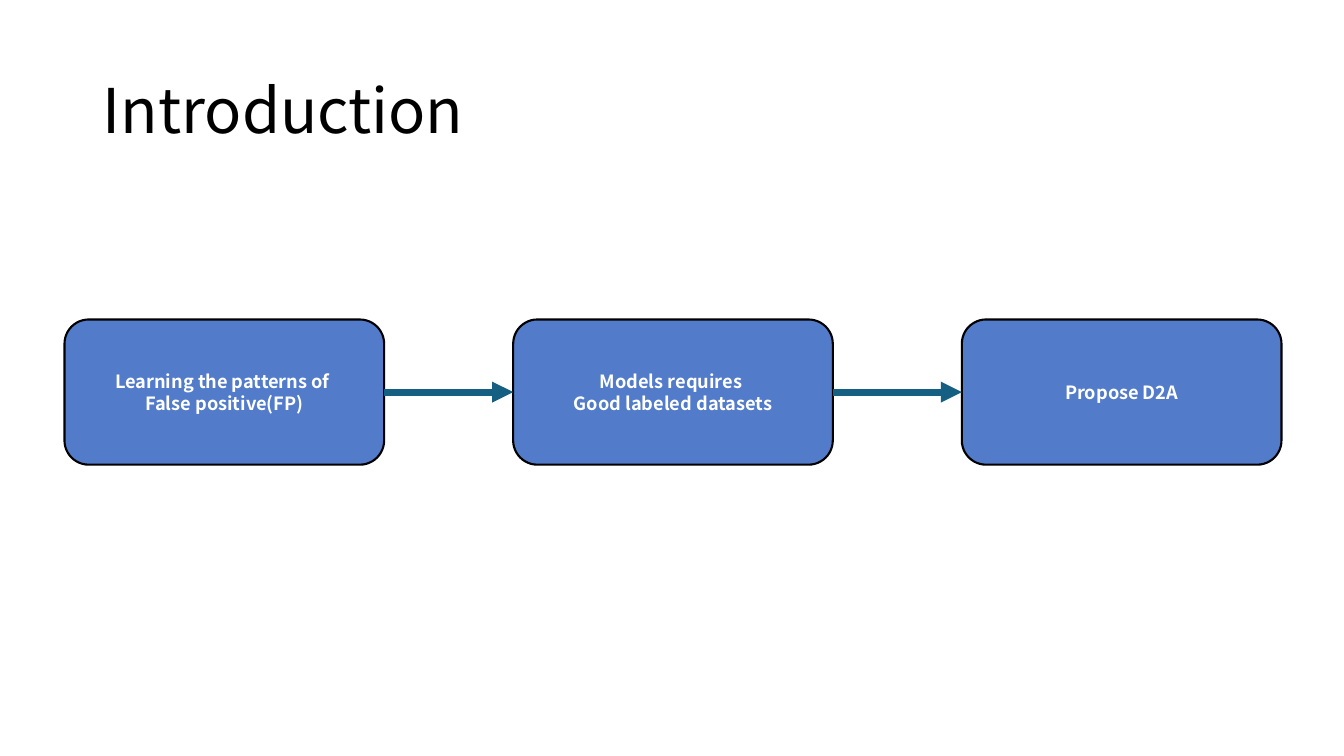
"""Build the Introduction slide: a title above a chain of three linked steps."""
from dataclasses import dataclass
from itertools import pairwise

from lxml.etree import SubElement
from pptx import Presentation
from pptx.dml.color import RGBColor
from pptx.enum.shapes import MSO_CONNECTOR as Connector, MSO_SHAPE as Shape
from pptx.enum.text import MSO_ANCHOR as Anchor, PP_ALIGN as Align
from pptx.oxml.ns import qn
from pptx.shapes.autoshape import Shape as Box
from pptx.slide import Slide
from pptx.text.text import TextFrame
from pptx.util import Inches, Pt

COLOURS = {"ink": "000000", "step": "527BCA", "label": "FFFFFF", "arrow": "156082"}
FONT = "Noto Sans CJK KR"
PAGE_WIDTH, PAGE_HEIGHT = 13.33, 7.5
FIRST_LEFT, COLUMN_PITCH = 0.64, 4.45
STEP_TOP, STEP_WIDTH, STEP_HEIGHT = 3.17, 3.17, 1.44
RIGHT_SIDE, LEFT_SIDE = 3, 1


@dataclass(frozen=True)
class Step:
    column: int
    lines: tuple[str, ...]


STEPS = (
    Step(0, ("Learning the patterns of ", "False positive(FP)")),
    Step(1, ("Models requires ", "Good labeled datasets")),
    Step(2, ("Propose D2A",)),
)


def colour(name: str) -> RGBColor:
    return RGBColor.from_string(COLOURS[name])


def write_lines(frame: TextFrame, lines: tuple[str, ...], size: float, ink: str,
                bold: bool, align: Align, spacing: float) -> None:
    frame.word_wrap = True
    frame.vertical_anchor = Anchor.MIDDLE
    for index, line in enumerate(lines):
        para = frame.add_paragraph() if index else frame.paragraphs[0]
        para.alignment = align
        para.line_spacing = spacing
        span = para.add_run()
        span.text = line
        span.font.name = FONT
        span.font.size = Pt(size)
        span.font.bold = bold
        span.font.color.rgb = colour(ink)
        SubElement(span.font._element, qn("a:ea"), typeface=FONT)


def add_title(page: Slide, text: str) -> None:
    box = page.shapes.add_textbox(Inches(0.92), Inches(0.4), Inches(11.5), Inches(1.45))
    write_lines(box.text_frame, (text,), 44, "ink", False, Align.LEFT, 0.9)


def add_step(page: Slide, step: Step) -> Box:
    left = FIRST_LEFT + step.column * COLUMN_PITCH
    box = page.shapes.add_shape(Shape.ROUNDED_RECTANGLE, Inches(left), Inches(STEP_TOP),
                                Inches(STEP_WIDTH), Inches(STEP_HEIGHT))
    box.shadow.inherit = False
    box.fill.solid()
    box.fill.fore_color.rgb = colour("step")
    box.line.color.rgb = colour("ink")
    box.line.width = Pt(1.5)
    write_lines(box.text_frame, step.lines, 13, "label", True, Align.CENTER, 1.0)
    return box


def add_arrow(page: Slide, start: Box, end: Box) -> None:
    arrow = page.shapes.add_connector(Connector.STRAIGHT, 0, 0, 0, 0)
    arrow.begin_connect(start, RIGHT_SIDE)
    arrow.end_connect(end, LEFT_SIDE)
    arrow.line.color.rgb = colour("arrow")
    arrow.line.width = Pt(5)
    SubElement(arrow.line._get_or_add_ln(), qn("a:tailEnd"), type="triangle")
    SubElement(arrow._element.spPr, qn("a:effectLst"))


def main() -> None:
    deck = Presentation()
    deck.slide_width, deck.slide_height = Inches(PAGE_WIDTH), Inches(PAGE_HEIGHT)
    page = deck.slides.add_slide(deck.slide_layouts[6])
    add_title(page, "Introduction")
    boxes = [add_step(page, step) for step in STEPS]
    for start, end in pairwise(boxes):
        add_arrow(page, start, end)
    deck.save("out.pptx")


if __name__ == "__main__":
    main()
